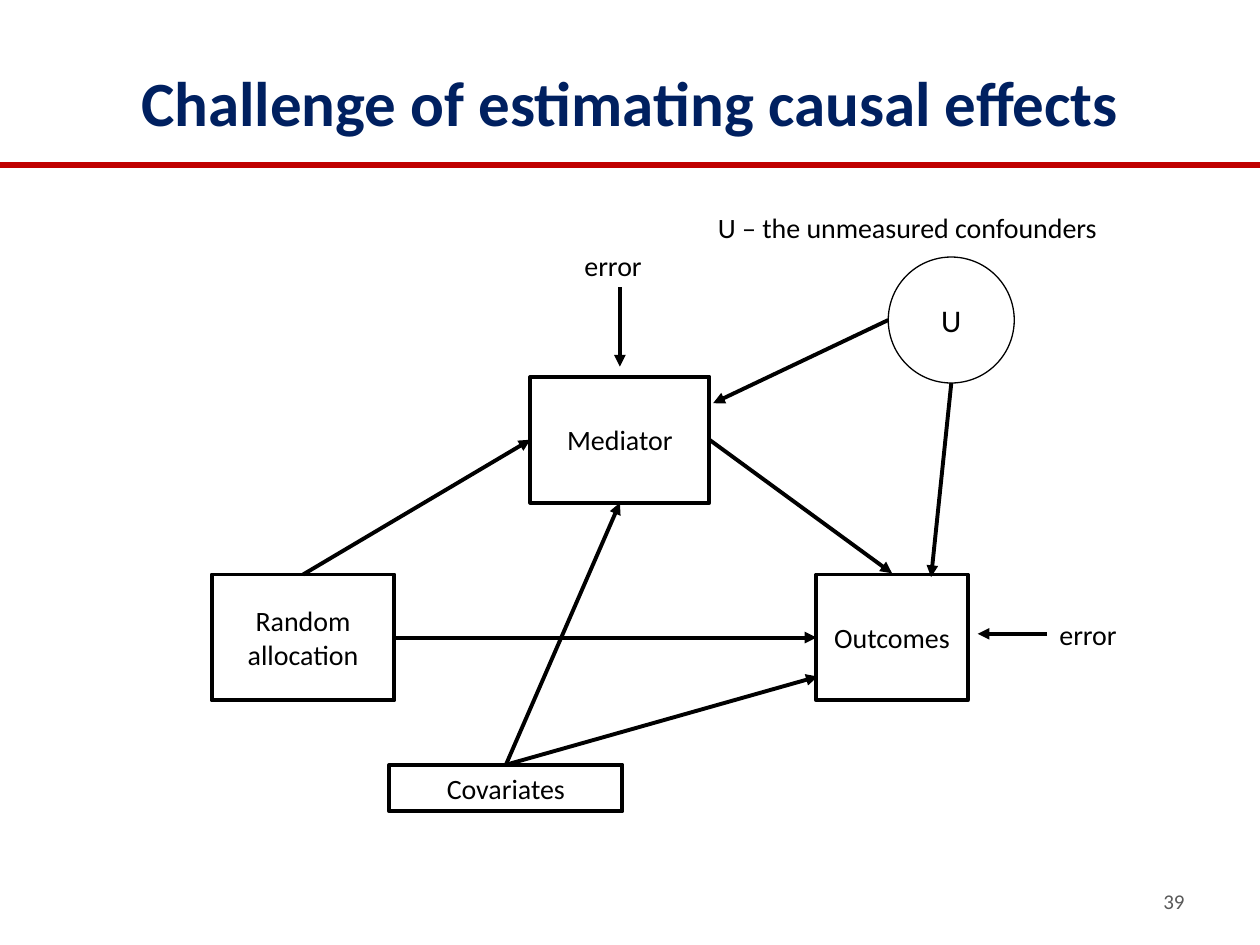
from pptx import Presentation
from pptx import util as u
from pptx.dml.color import RGBColor
from pptx.enum import shapes, text
from pptx.oxml.ns import qn
from lxml import etree

BLACK = RGBColor(0x00, 0x00, 0x00)
NAVY = RGBColor(0x00, 0x20, 0x60)
RED = RGBColor(0xC0, 0x00, 0x00)
GREY = RGBColor(0x59, 0x59, 0x59)
TOP, LEFT, BOTTOM, RIGHT = range(4)

deck = Presentation()
deck.slide_width, deck.slide_height = u.Inches(10), u.Inches(7.5)
page = deck.slides.add_slide(deck.slide_layouts[6])


def write(box, words, size, color=BLACK, align=text.PP_ALIGN.LEFT,
          anchor=text.MSO_ANCHOR.MIDDLE, bold=False, wrap=True):
    frame = box.text_frame
    frame.word_wrap = wrap
    frame.vertical_anchor = anchor
    frame.text = words
    for para in frame.paragraphs:
        para.alignment = align
        para.font.name = "Calibri"
        para.font.size = u.Pt(size)
        para.font.bold = bold
        para.font.color.rgb = color


def draw_line(start, end, color=BLACK, width=2.25, arrow=True):
    """Each end is an (x, y) point or a (shape, side) pair."""
    points = [(0, 0) if hasattr(place[0], "text_frame") else place
              for place in (start, end)]
    line = page.shapes.add_connector(
        shapes.MSO_CONNECTOR.STRAIGHT,
        *[u.Inches(value) for point in points for value in point])
    if points[0] != start:
        line.begin_connect(*start)
    if points[1] != end:
        line.end_connect(*end)
    line.line.color.rgb = color
    line.line.width = u.Pt(width)
    if arrow:
        etree.SubElement(line.line._get_or_add_ln(), qn("a:tailEnd"), type="triangle")
    etree.SubElement(line._element.spPr, qn("a:effectLst"))


# Title, rule and page number
draw_line((0, 1.31), (10, 1.31), RED, 3, arrow=False)
title = page.shapes.add_textbox(*map(u.Inches, (0.5, 0.3, 9, 1.01)))
write(title, "Challenge of estimating causal effects", 36, NAVY,
      text.PP_ALIGN.CENTER, bold=True)
number = page.shapes.add_textbox(*map(u.Inches, (7.17, 6.95, 2.33, 0.4)))
write(number, "39", 12, GREY, text.PP_ALIGN.RIGHT)

# Variables of the causal diagram
RECTANGLE, OVAL = shapes.MSO_SHAPE.RECTANGLE, shapes.MSO_SHAPE.OVAL
nodes = {}
for words, kind, place, size, width in [
    ("Random\nallocation", RECTANGLE, (1.68, 4.56, 1.45, 1), 16, 2.25),
    ("Mediator", RECTANGLE, (4.21, 2.99, 1.42, 1), 16, 2.25),
    ("Outcomes", RECTANGLE, (6.48, 4.56, 1.2, 1), 16, 2.25),
    ("Covariates", RECTANGLE, (3.09, 6.07, 1.85, 0.37), 16, 2.25),
    ("U", OVAL, (7.05, 2.04, 1, 1), 18, 0.75),
]:
    node = page.shapes.add_shape(kind, *map(u.Inches, place))
    node.shadow.inherit = False
    node.fill.background()
    node.line.color.rgb = BLACK
    node.line.width = u.Pt(width)
    write(node, words, size, align=text.PP_ALIGN.CENTER, wrap=False)
    nodes[words.split()[0]] = node

# Free labels
for words, place in [
    ("U – the unmeasured confounders", (5.6, 1.62, 3.97, 0.37)),
    ("error", (4.54, 1.92, 0.76, 0.37)),
    ("error", (8.31, 4.85, 0.76, 0.37)),
]:
    label = page.shapes.add_textbox(*map(u.Inches, place))
    write(label, words, 16, anchor=text.MSO_ANCHOR.TOP)

# Causal arrows
allocation, mediator = nodes["Random"], nodes["Mediator"]
outcomes, covariates = nodes["Outcomes"], nodes["Covariates"]
for start, end in [
    ((allocation, RIGHT), (outcomes, LEFT)),
    ((allocation, TOP), (mediator, LEFT)),
    ((mediator, RIGHT), (7.08, 4.55)),
    ((covariates, TOP), (mediator, BOTTOM)),
    ((covariates, TOP), (6.49, 5.37)),
    ((7.05, 2.54), (5.66, 3.2)),    # U to mediator
    ((7.55, 3.04), (7.39, 4.58)),   # U to outcomes
    ((4.92, 2.28), (4.92, 2.91)),   # error to mediator
    ((8.31, 5.03), (7.76, 5.03)),   # error to outcomes
]:
    draw_line(start, end)

deck.save("out.pptx")
